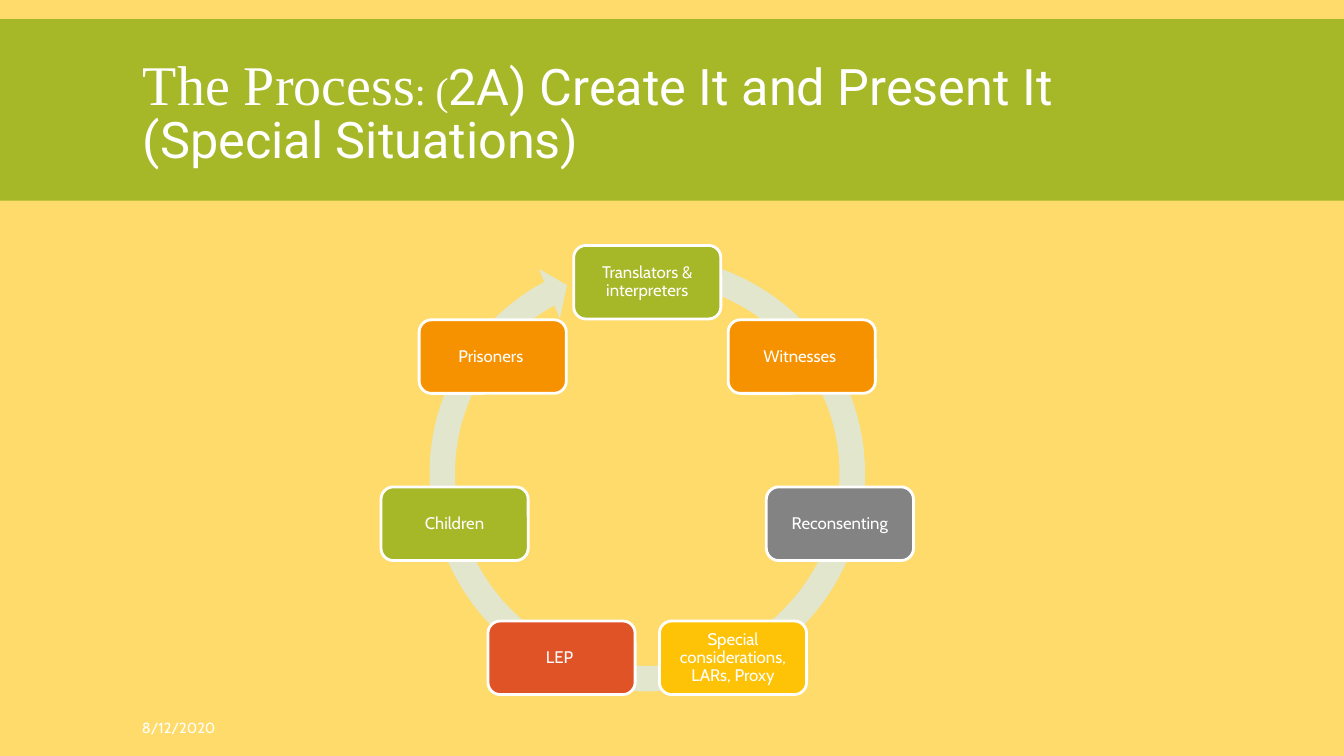
from math import cos, pi, sin

from pptx import Presentation
from pptx.dml.color import RGBColor
from pptx.enum.shapes import MSO_SHAPE
from pptx.enum.text import MSO_ANCHOR, PP_ALIGN
from pptx.util import Inches, Pt

WHITE = RGBColor(0xFF, 0xFF, 0xFF)
SAND = RGBColor(0xFE, 0xDB, 0x6A)
GREEN = RGBColor(0xA6, 0xB7, 0x27)
PALE_GREEN = RGBColor(0xE1, 0xE6, 0xCD)
ORANGE = RGBColor(0xF6, 0x92, 0x00)
GREY = RGBColor(0x83, 0x83, 0x83)
YELLOW = RGBColor(0xFE, 0xC3, 0x06)
RED = RGBColor(0xDF, 0x53, 0x27)

TITLE_LINES = [
    [("The Process", "Times New Roman", 40),
     (": (", "Times New Roman", 28),
     ("2A) Create It and Present It", "Roboto", 36)],
    [("(Special Situations)", "Roboto", 36)],
]
DATE = "8/12/2020"
SITUATIONS = [
    ("Translators & interpreters", GREEN),
    ("Witnesses ", ORANGE),
    ("Reconsenting", GREY),
    ("Special considerations, LARs, Proxy", YELLOW),
    ("LEP ", RED),
    ("Children", GREEN),
    ("Prisoners ", ORANGE),
]
ARROW_ADJUSTMENTS = [0.055, 3.307, 144.874, 169.665, 0.058]

CENTER_X, CENTER_Y, RADIUS = 6.42, 4.76, 1.96
NODE_W, NODE_H, NODE_INSET = 1.46, 0.73, 0.08


def add_filled(s, kind, left, top, width, height, color):
    sp = s.shapes.add_shape(kind, Inches(left), Inches(top), Inches(width), Inches(height))
    sp.shadow.inherit = False
    sp.fill.solid()
    sp.fill.fore_color.rgb = color
    sp.line.fill.background()
    return sp


def add_text_box(s, left, top, width, height):
    tf = s.shapes.add_textbox(Inches(left), Inches(top), Inches(width), Inches(height)).text_frame
    tf.word_wrap = True
    tf.vertical_anchor = MSO_ANCHOR.MIDDLE
    return tf


def style_run(r, font, size):
    r.font.name = font
    r.font.size = Pt(size)
    r.font.color.rgb = WHITE


def add_title(s):
    p = add_text_box(s, 1.32, 0.31, 10.7, 1.65).paragraphs[0]
    p.line_spacing = 0.85
    for i, line in enumerate(TITLE_LINES):
        if i:
            p.add_line_break()
        for text, font, size in line:
            r = p.add_run()
            r.text = text
            style_run(r, font, size)


def add_date(s):
    tf = add_text_box(s, 1.31, 7.02, 3.28, 0.4)
    tf.text = DATE
    p = tf.paragraphs[0]
    p.space_after = Pt(6)
    style_run(p.runs[0], "Cabin", 10.5)


def add_cycle(s):
    arrow = add_filled(s, MSO_SHAPE.CIRCULAR_ARROW, 4.12, 2.4, 4.6, 4.6, PALE_GREEN)
    for i, value in enumerate(ARROW_ADJUSTMENTS):
        arrow.adjustments[i] = value

    for i, (label, color) in enumerate(SITUATIONS):
        angle = 2 * pi * i / len(SITUATIONS)
        left = CENTER_X + RADIUS * sin(angle) - NODE_W / 2
        top = CENTER_Y - RADIUS * cos(angle) - NODE_H / 2
        node = add_filled(s, MSO_SHAPE.ROUNDED_RECTANGLE, left, top, NODE_W, NODE_H, color)
        node.line.color.rgb = WHITE
        node.line.width = Pt(2)
        tf = node.text_frame
        tf.word_wrap = True
        tf.vertical_anchor = MSO_ANCHOR.MIDDLE
        tf.margin_left = tf.margin_right = Inches(NODE_INSET)
        tf.margin_top = tf.margin_bottom = Inches(NODE_INSET)
        tf.text = label
        p = tf.paragraphs[0]
        p.alignment = PP_ALIGN.CENTER
        p.line_spacing = 0.9
        style_run(p.runs[0], "Cabin", 12)


def main():
    prs = Presentation()
    prs.slide_width = Inches(13.33)
    prs.slide_height = Inches(7.5)
    s = prs.slides.add_slide(prs.slide_layouts[6])
    s.background.fill.solid()
    s.background.fill.fore_color.rgb = SAND
    add_filled(s, MSO_SHAPE.RECTANGLE, 0, 0.19, 13.33, 1.8, GREEN)
    add_title(s)
    add_date(s)
    add_cycle(s)
    prs.save("out.pptx")


if __name__ == "__main__":
    main()
